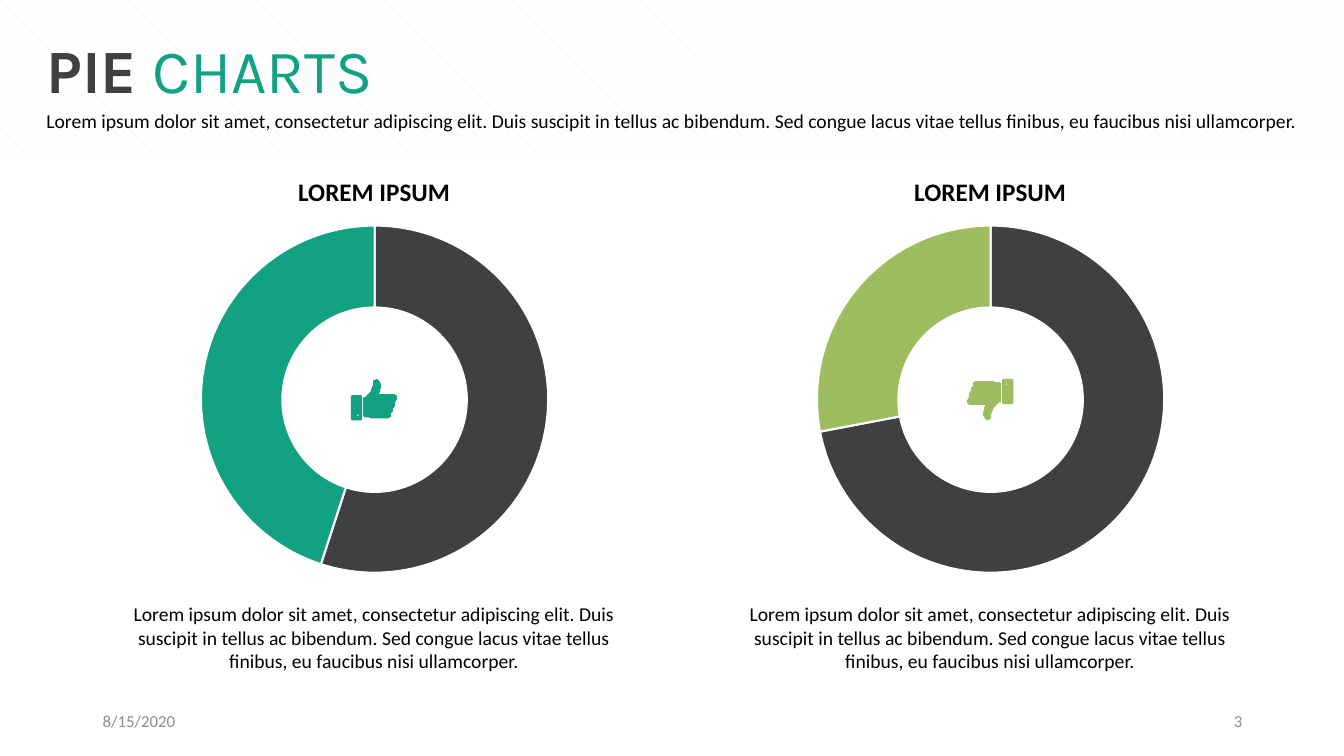
from pptx import Presentation
from pptx.chart.data import CategoryChartData
from pptx.dml.color import RGBColor
from pptx.enum.chart import XL_CHART_TYPE as Kind
from pptx.enum.dml import MSO_PATTERN as Pattern
from pptx.enum.shapes import MSO_SHAPE as Form
from pptx.enum.text import MSO_ANCHOR as Anchor, MSO_AUTO_SIZE as Fit, PP_ALIGN as Align
from pptx.util import Emu, Pt

PX = 9144  # 100 px to the inch
PITCH = 611
COLORS = {"dark": "404040", "teal": "13A183", "green": "9EBC60", "white": "FFFFFF",
          "pale": "F2F2F2", "black": "000000", "gray": "8C8C8C"}

LOREM = ("Lorem ipsum dolor sit amet, consectetur adipiscing elit. Duis suscipit in tellus "
         "ac bibendum. Sed congue lacus vitae tellus finibus, eu faucibus nisi ullamcorper.")

# Thumb-up icon, in px from its top left corner
ICON = 46, 41
HAND = [(46, 18), (45, 16), (43, 15), (28, 15), (28, 14), (29, 13), (29, 10), (30, 9),
        (30, 5), (29, 4), (29, 3), (27, 1), (26, 0), (25, 0), (24, 1), (23, 1), (22, 2),
        (22, 6), (21, 8), (21, 9), (20, 10), (20, 12), (15, 17), (14, 18), (13, 18),
        (12, 19), (12, 37), (13, 37), (14, 38), (18, 38), (20, 39), (37, 39), (39, 38),
        (40, 37), (40, 35), (39, 34), (40, 34), (42, 32), (42, 30), (41, 29), (42, 29),
        (44, 27), (44, 24), (43, 23), (44, 23), (45, 21), (46, 20)]
CUFF = [(10, 16), (1, 16), (0, 17), (0, 40), (1, 41), (10, 41), (11, 40), (11, 17)]
BUTTON = [(7, 37), (6, 36), (7, 35), (8, 36)]


def px(*sizes):
    return [Emu(size * PX) for size in sizes]


def color(name):
    return RGBColor.from_string(COLORS[name])


class Deck:
    """Holds the style and the current slide."""

    def __init__(self, wide, high):
        self.prs = Presentation()
        self.prs.slide_width, self.prs.slide_height = px(wide, high)
        self.slide = self.prs.slides.add_slide(self.prs.slide_layouts[5])
        self.shapes = self.slide.shapes

    def style(self, run, size, tone, bold=False, face="Calibri"):
        font = run.font
        font.name, font.size, font.bold = face, Pt(size), bold
        font.color.rgb = color(tone)

    def frame(self, shape, anchor, inset):
        frame = shape.text_frame
        frame.word_wrap, frame.auto_size = True, Fit.NONE
        frame.vertical_anchor = anchor
        frame.margin_left, frame.margin_top, frame.margin_right, frame.margin_bottom = px(
            inset, inset // 2, inset, inset // 2)
        return frame

    def title(self, box, parts):
        """Fill the title with (text, tone, bold) parts."""
        title = self.shapes.title
        title.left, title.top, title.width, title.height = px(*box)
        line = self.frame(title, Anchor.TOP, 0).paragraphs[0]
        line.alignment = Align.LEFT
        for text, tone, bold in parts:
            run = line.add_run()
            run.text = text
            self.style(run, 44, tone, bold, "Karla")

    def text(self, box, text, size, tone="black", align=Align.LEFT,
             anchor=Anchor.TOP, bold=False, inset=0):
        frame = self.frame(self.shapes.add_textbox(*px(*box)), anchor, inset)
        frame.text = text
        line = frame.paragraphs[0]
        line.alignment = align
        self.style(line.runs[0], size, tone, bold)

    def paint(self, shape, tone):
        shape.shadow.inherit = False
        shape.fill.solid()
        shape.fill.fore_color.rgb = color(tone)
        shape.line.fill.background()

    def band(self, box):
        """Add a hatched band behind everything else."""
        band = self.shapes.add_shape(Form.RECTANGLE, *px(*box))
        self.paint(band, "white")
        band.fill.patterned()
        band.fill.pattern = Pattern.DASHED_DOWNWARD_DIAGONAL
        band.fill.fore_color.rgb = color("pale")
        band.fill.back_color.rgb = color("white")
        self.shapes.title.element.addprevious(band.element)

    def disc(self, box):
        self.paint(self.shapes.add_shape(Form.OVAL, *px(*box)), "white")

    def pie(self, box, vals, tones):
        data = CategoryChartData()
        data.categories = ["1", "2"]
        data.add_series("Series 1", vals)
        chart = self.shapes.add_chart(Kind.PIE, *px(*box), data).chart
        chart.has_legend = chart.has_title = False
        chart.font.name, chart.font.size = "Calibri", Pt(10)
        chart.font.color.rgb = color("black")
        plot = chart.plots[0]
        plot.vary_by_categories = True
        for spot, tone in enumerate(tones):
            slice_ = plot.series[0].points[spot].format
            slice_.fill.solid()
            slice_.fill.fore_color.rgb = color(tone)
            slice_.line.color.rgb = color("white")
            slice_.line.width = Pt(1.5)

    def thumb(self, left, top, tone, down):
        """Draw the thumb icon, turned half round when down."""
        def place(ring):
            return [(left + (ICON[0] - x if down else x), top + (ICON[1] - y if down else y))
                    for x, y in ring]

        group = self.shapes.add_group_shape()
        for rings in ([HAND], [CUFF, BUTTON]):
            first, *rest = map(place, rings)
            pen = group.shapes.build_freeform(*first[0], scale=PX)
            pen.add_line_segments(first[1:], close=True)
            for ring in rest:
                pen.move_to(*ring[0])
                pen.add_line_segments(ring[1:], close=True)
            self.paint(pen.convert_to_shape(), tone)


def main():
    deck = Deck(1333, 750)
    deck.band((0, 0, 1333, 154))
    deck.title((46, 32, 1242, 74), [("PIE ", "dark", True), ("CHARTS", "teal", False)])
    deck.text((46, 108, 1242, 24), LOREM, 14)
    for left, text, align in ((92, "8/15/2020", Align.LEFT), (942, "3", Align.RIGHT)):
        deck.text((left, 695, 300, 40), text, 12, "gray", align, Anchor.MIDDLE, inset=10)

    for col, (vals, tone) in enumerate([((55, 45), "teal"), ((72, 28), "green")]):
        shift = col * PITCH
        deck.pie((92 + shift, 210, 559, 372), vals, ("dark", tone))
        deck.disc((279 + shift, 304, 185, 185))
        deck.thumb(348 + shift, 376, tone, down=col == 1)
        deck.text((114 + shift, 175, 514, 30), "LOREM IPSUM", 18, align=Align.CENTER, bold=True)
        deck.text((114 + shift, 597, 514, 71), LOREM, 14, align=Align.CENTER,
                  anchor=Anchor.MIDDLE)
    deck.prs.save("out.pptx")


if __name__ == "__main__":
    main()
